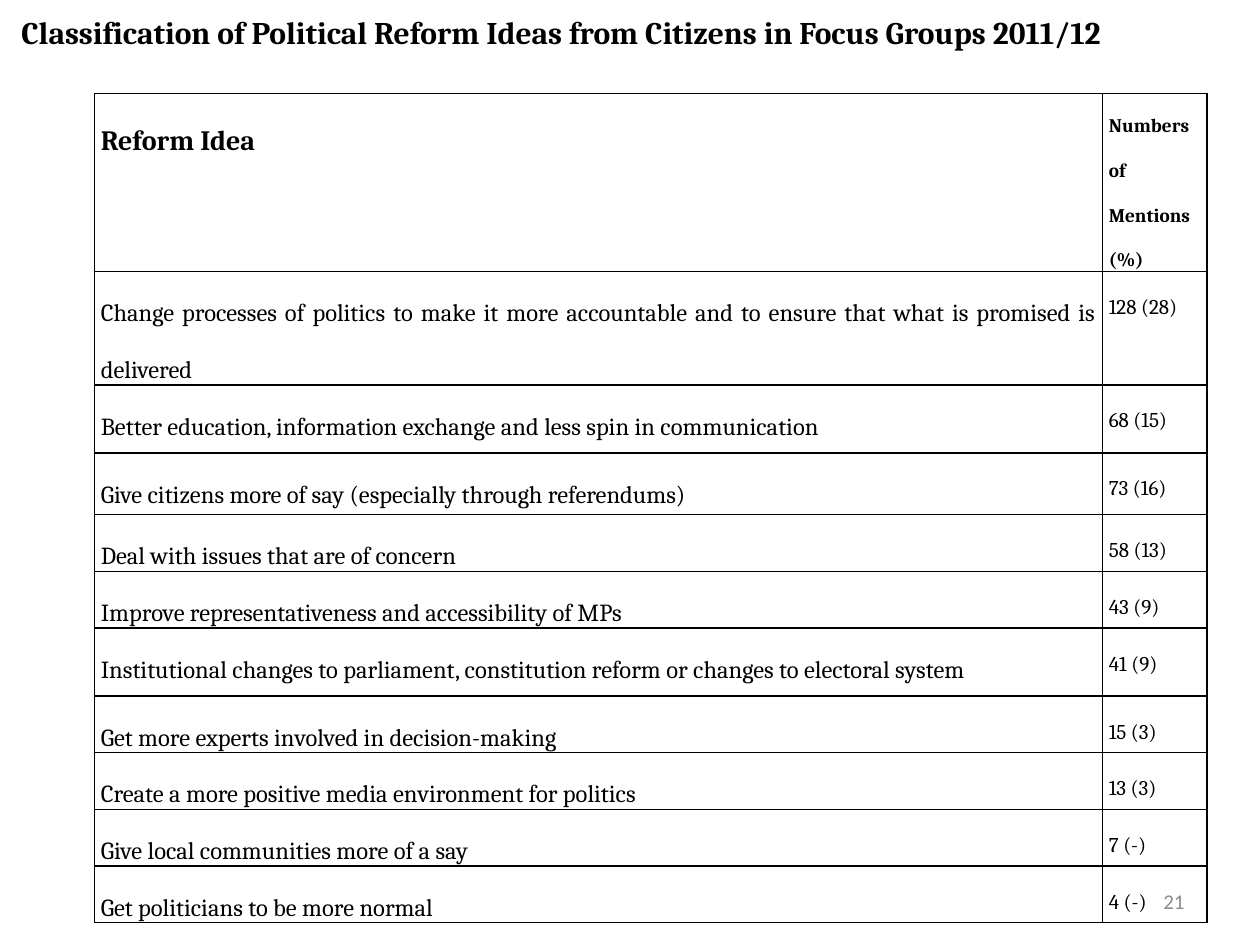
from lxml import etree
from pptx import Presentation
from pptx.dml.color import RGBColor
from pptx.enum.text import MSO_ANCHOR, PP_ALIGN
from pptx.oxml.ns import qn
from pptx.util import Inches, Pt

BLACK = RGBColor(0x00, 0x00, 0x00)
WHITE = RGBColor(0xFF, 0xFF, 0xFF)
GREY = RGBColor(0x8C, 0x8C, 0x8C)
LEFT, RIGHT, JUSTIFY = PP_ALIGN.LEFT, PP_ALIGN.RIGHT, PP_ALIGN.JUSTIFY
MIDDLE = MSO_ANCHOR.MIDDLE

IDEAS = [
    ("Reform Idea", "Numbers of Mentions (%)", 1.41),
    ("Change processes of politics to make it more accountable and to ensure "
     "that what is promised is delivered", "128 (28)", 0.9),
    ("Better education, information exchange and less spin in communication",
     "68 (15)", 0.54),
    ("Give citizens more of say (especially through referendums)", "73 (16)", 0.49),
    ("Deal with issues that are of concern", "58 (13)", 0.45),
    ("Improve representativeness and accessibility of MPs", "43 (9)", 0.45),
    ("Institutional changes to parliament, constitution reform or changes to "
     "electoral system", "41 (9)", 0.54),
    ("Get more experts involved in decision-making", "15 (3)", 0.45),
    ("Create a more positive media environment for politics", "13 (3)", 0.45),
    ("Give local communities more of a say", "7 (-)", 0.45),
    ("Get politicians to be more normal", "4 (-)", 0.39),
]


def set_text(tf, text, size, font, color, bold, align):
    p = tf.paragraphs[0]
    p.text = text
    p.alignment = align
    p.font.size = Pt(size)
    p.font.name = font
    p.font.bold = bold
    p.font.color.rgb = color
    return p


def add_borders(cell):
    tc_pr = cell._tc.get_or_add_tcPr()
    for side in ("a:lnL", "a:lnR", "a:lnT", "a:lnB"):
        ln = etree.SubElement(tc_pr, qn(side), w=str(Pt(1)))
        fill = etree.SubElement(ln, qn("a:solidFill"))
        etree.SubElement(fill, qn("a:srgbClr"), val=str(BLACK))


prs = Presentation()
prs.slide_width = Inches(10)
prs.slide_height = Inches(7.5)
s = prs.slides.add_slide(prs.slide_layouts[6])

heights = [height for _, _, height in IDEAS]
table = s.shapes.add_table(len(IDEAS), 2, Inches(0.75), Inches(0.74),
                           Inches(8.83), Inches(sum(heights))).table
table.first_row = False
table.horz_banding = False
table.columns[0].width = Inches(8)
table.columns[1].width = Inches(0.83)

for row, (idea, mentions, height) in enumerate(IDEAS):
    table.rows[row].height = Inches(height)
    header = row == 0
    sizes = (16, 11) if header else (14, 12)
    for col, text in enumerate((idea, mentions)):
        cell = table.cell(row, col)
        cell.margin_left = cell.margin_right = Inches(0.05)
        cell.margin_top = cell.margin_bottom = 0
        add_borders(cell)
        cell.fill.solid()
        cell.fill.fore_color.rgb = WHITE
        align = LEFT if header and col == 1 else JUSTIFY
        p = set_text(cell.text_frame, text, sizes[col], "Cambria", BLACK, header, align)
        p.line_spacing = 2.0
        p.space_after = Pt(10)

title = s.shapes.add_textbox(Inches(0), Inches(0.05), Inches(9.33), Inches(0.4))
tf = title.text_frame
tf.word_wrap = True
tf.vertical_anchor = MIDDLE
tf.margin_left = Inches(0.17)
set_text(tf, "Classification of Political Reform Ideas from Citizens in Focus Groups 2011/12",
         18, "Cambria", BLACK, True, LEFT)

number = s.shapes.add_textbox(Inches(7.17), Inches(6.95), Inches(2.33), Inches(0.4))
tf = number.text_frame
tf.word_wrap = True
tf.vertical_anchor = MIDDLE
set_text(tf, "21", 12, "Calibri", GREY, False, RIGHT)

prs.save("out.pptx")
